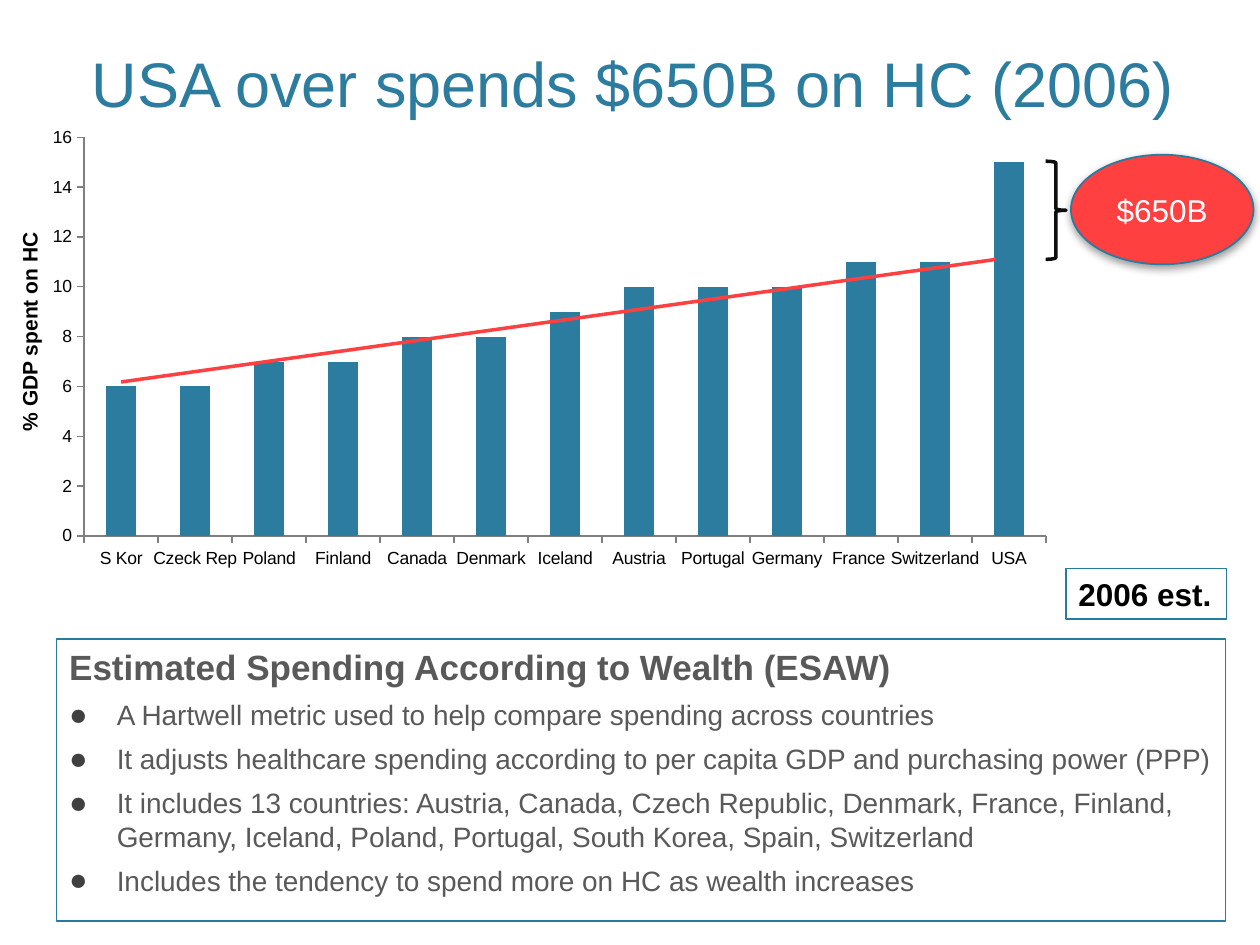
"""Build the slide on health care spending as a share of GDP."""
from dataclasses import dataclass

from lxml.etree import SubElement
from pptx import Presentation
from pptx.chart.data import CategoryChartData
from pptx.dml.color import RGBColor
from pptx.enum.chart import XL_CHART_TYPE, XL_TICK_MARK
from pptx.enum.shapes import MSO_CONNECTOR, MSO_SHAPE
from pptx.enum.text import MSO_ANCHOR, MSO_AUTO_SIZE, PP_ALIGN
from pptx.oxml import parse_xml
from pptx.oxml.ns import nsdecls, qn
from pptx.util import Cm, Pt

FONT = "Arial"
TEAL, BORDER, RED = "2C7C9F", "287A9E", "FF4040"
GREY, BULLET_GREY, AXIS_GREY = "595959", "404040", "808080"
BLACK, NEAR_BLACK, WHITE = "000000", "0D0D0D", "FFFFFF"

SPENDING = {
    "S Kor": 6, "Czeck Rep": 6, "Poland": 7, "Finland": 7, "Canada": 8,
    "Denmark": 8, "Iceland": 9, "Austria": 10, "Portugal": 10,
    "Germany": 10, "France ": 11, "Switzerland": 11, "USA": 15,
}
PLOT_AREA = {"x": 0.059, "y": 0.019, "w": 0.941, "h": 0.77}


@dataclass(frozen=True)
class Box:
    left: float
    top: float
    width: float
    height: float

    def lengths(self) -> tuple:
        return Cm(self.left), Cm(self.top), Cm(self.width), Cm(self.height)


@dataclass(frozen=True)
class Style:
    size: float
    color: str
    bold: bool = False


@dataclass(frozen=True)
class Line:
    text: str
    style: Style
    bulleted: bool = False


POINT = Style(16, GREY)
ESAW_LINES = [
    Line("Estimated Spending According to Wealth (ESAW)", Style(20, GREY, True)),
    Line("A Hartwell metric used to help compare spending across countries", POINT, True),
    Line("It adjusts healthcare spending according to per capita GDP and "
         "purchasing power (PPP)", POINT, True),
    Line("It includes 13 countries: Austria, Canada, Czech Republic, Denmark, "
         "France, Finland, Germany, Iceland, Poland, Portugal, South Korea, "
         "Spain, Switzerland", POINT, True),
    Line("Includes the tendency to spend more on HC as wealth increases", POINT, True),
]


def rgb(color: str) -> RGBColor:
    return RGBColor.from_string(color)


def set_font(font, style: Style) -> None:
    font.name, font.size, font.bold = FONT, Pt(style.size), style.bold
    font.color.rgb = rgb(style.color)


def outline(line, color: str, width: float) -> None:
    line.color.rgb = rgb(color)
    line.width = Pt(width)


def place(shape, box: Box) -> None:
    shape.left, shape.top, shape.width, shape.height = box.lengths()


def write(paragraph, text: str, style: Style, align=PP_ALIGN.LEFT) -> None:
    paragraph.alignment = align
    run = paragraph.add_run()
    run.text = text
    set_font(run.font, style)


def set_bullet(paragraph, bulleted: bool) -> None:
    properties = paragraph._p.get_or_add_pPr()
    indent = Cm(0.96) if bulleted else 0
    properties.set("marL", str(indent))
    properties.set("indent", str(-indent))
    if not bulleted:
        SubElement(properties, qn("a:buNone"))
        return
    color = SubElement(properties, qn("a:buClr"))
    SubElement(color, qn("a:srgbClr"), val=BULLET_GREY)
    SubElement(properties, qn("a:buSzPct"), val="110000")
    SubElement(properties, qn("a:buFont"), typeface=FONT)
    SubElement(properties, qn("a:buChar"), char="●")


def add_title(slide) -> None:
    title = slide.shapes.title
    place(title, Box(1.19, 0.64, 23.14, 1.9))
    title.text_frame.auto_size = MSO_AUTO_SIZE.NONE
    title.text_frame.vertical_anchor = MSO_ANCHOR.BOTTOM
    write(title.text_frame.paragraphs[0], "USA over spends $650B on HC (2006)",
          Style(36, TEAL), PP_ALIGN.CENTER)


def add_esaw_list(slide) -> None:
    body = slide.placeholders[1]
    place(body, Box(1.14, 12.88, 23.57, 5.69))
    outline(body.line, BORDER, 0.75)
    frame = body.text_frame
    frame.auto_size = MSO_AUTO_SIZE.NONE
    for index, line in enumerate(ESAW_LINES):
        paragraph = frame.add_paragraph() if index else frame.paragraphs[0]
        paragraph.space_before = Pt(6)
        set_bullet(paragraph, line.bulleted)
        write(paragraph, line.text, line.style)


def add_spending_chart(slide, box: Box) -> None:
    data = CategoryChartData()
    data.categories = list(SPENDING)
    data.add_series("Series 1", list(SPENDING.values()))
    chart = slide.shapes.add_chart(
        XL_CHART_TYPE.COLUMN_CLUSTERED, *box.lengths(), data).chart
    chart.has_title = chart.has_legend = False
    set_font(chart.font, Style(10, BLACK))
    bars = chart.plots[0]
    bars.gap_width, bars.vary_by_categories = 150, False
    fill = bars.series[0].format.fill
    fill.solid()
    fill.fore_color.rgb = rgb(TEAL)
    for axis in (chart.category_axis, chart.value_axis):
        axis.has_major_gridlines = False
        axis.major_tick_mark = XL_TICK_MARK.OUTSIDE
        outline(axis.format.line, AXIS_GREY, 0.75)
    scale = chart.value_axis
    scale.minimum_scale, scale.maximum_scale, scale.major_unit = 0, 16, 2
    plot_area = chart._chartSpace.chart.plotArea
    for old_layout in plot_area.findall(qn("c:layout")):
        plot_area.remove(old_layout)
    modes = "".join(f'<c:{side}Mode val="edge"/>' for side in "xy")
    sizes = "".join(f'<c:{key} val="{value}"/>' for key, value in PLOT_AREA.items())
    plot_area.insert(0, parse_xml(
        f'<c:layout {nsdecls("c")}><c:manualLayout><c:layoutTarget val="inner"/>'
        f"{modes}{sizes}</c:manualLayout></c:layout>"))


def add_trend(slide, start: tuple[float, float], end: tuple[float, float]) -> None:
    trend = slide.shapes.add_connector(
        MSO_CONNECTOR.STRAIGHT, *(Cm(value) for value in start + end))
    outline(trend.line, RED, 2)
    SubElement(trend._element.spPr, qn("a:effectLst"))


def add_outlined(slide, preset, box: Box, color: str, width: float):
    shape = slide.shapes.add_shape(preset, *box.lengths())
    shape.shadow.inherit = False
    shape.fill.background()
    outline(shape.line, color, width)
    return shape


def add_overspend(slide) -> None:
    add_outlined(slide, MSO_SHAPE.RIGHT_BRACE, Box(21.08, 3.25, 0.41, 1.98), NEAR_BLACK, 2)
    amount = add_outlined(slide, MSO_SHAPE.OVAL, Box(21.59, 3.12, 3.68, 2.21), BORDER, 1)
    amount.fill.solid()
    amount.fill.fore_color.rgb = rgb(RED)
    effects = amount._element.spPr.find(qn("a:effectLst"))
    shadow = SubElement(effects, qn("a:outerShdw"), blurRad=str(Pt(5)),
                        dist=str(Pt(2)), dir="5400000", rotWithShape="0")
    shade = SubElement(shadow, qn("a:srgbClr"), val=BLACK)
    SubElement(shade, qn("a:alpha"), val="40000")
    write(amount.text_frame.paragraphs[0], "$650B", Style(18, WHITE), PP_ALIGN.CENTER)


def add_label(slide, box: Box, text: str, size: float, align=PP_ALIGN.LEFT):
    label = slide.shapes.add_textbox(*box.lengths())
    label.text_frame.word_wrap = False
    write(label.text_frame.paragraphs[0], text, Style(size, BLACK, True), align)
    return label


def main() -> None:
    deck = Presentation()
    deck.slide_width, deck.slide_height = Cm(25.4), Cm(19.05)
    slide = deck.slides.add_slide(deck.slide_layouts[1])
    add_title(slide)
    add_esaw_list(slide)
    estimate = add_label(slide, Box(21.49, 11.46, 3.23, 1.02), "2006 est.", 18)
    outline(estimate.line, BORDER, 0.75)
    add_spending_chart(slide, Box(0.48, 2.57, 20.62, 10.44))
    add_trend(slide, (2.44, 7.7), (20.07, 5.23))
    add_overspend(slide)
    axis_title = add_label(slide, Box(-2.79, 6.12, 7.14, 1.14),
                           "% GDP spent on HC", 12, PP_ALIGN.CENTER)
    axis_title.rotation = 270
    axis_title.text_frame.paragraphs[0].space_before = Pt(6)
    deck.save("out.pptx")


if __name__ == "__main__":
    main()
